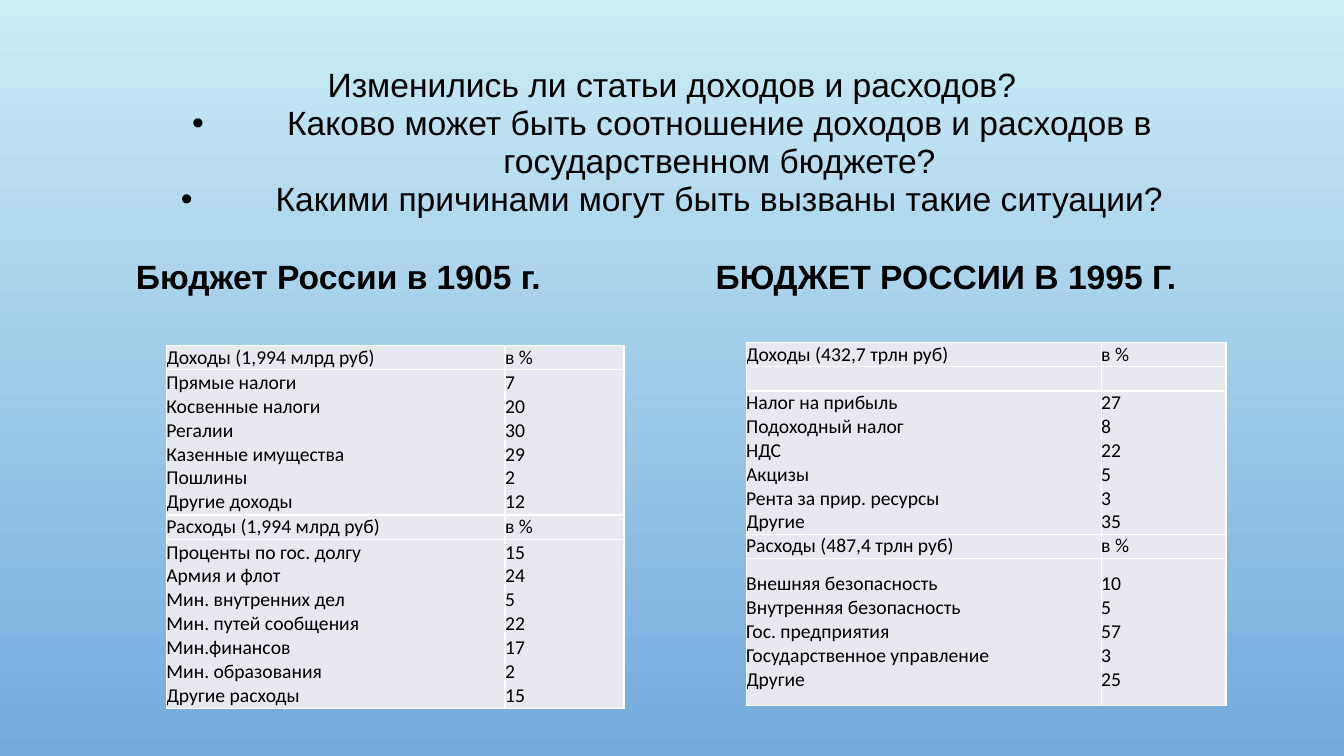
from collections import namedtuple
from dataclasses import dataclass

from pptx import Presentation
from pptx.dml.color import RGBColor
from pptx.enum.text import MSO_ANCHOR, PP_ALIGN
from pptx.oxml.ns import qn
from pptx.util import Inches, Pt
from lxml.etree import SubElement

Box = namedtuple("Box", "left top width height")
Section = namedtuple("Section", "height entries")


@dataclass(frozen=True)
class Theme:
    sky: str = "CBECF5"
    horizon: str = "73ABDD"
    ink: str = "000000"
    cell: str = "E8E9F0"
    border: str = "FFFFFF"
    display_font: str = "Arial"
    table_font: str = "Calibri"
    display_size: int = 24
    table_size: int = 14
    border_width: int = 1
    bullet_indent: float = 0.94


THEME = Theme()
LABEL_SHARE = 0.74

QUESTIONS = [
    ("Изменились ли статьи доходов и расходов?", False),
    ("Каково может быть соотношение доходов и расходов в государственном бюджете?", True),
    ("Какими причинами могут быть вызваны такие ситуации?", True),
]

BUDGET_1905 = [
    Section(0.24, [("Доходы (1,994 млрд руб)", "в %")]),
    Section(1.44, [
        ("Прямые налоги", "7"),
        ("Косвенные налоги", "20"),
        ("Регалии", "30"),
        ("Казенные имущества", "29"),
        ("Пошлины", "2"),
        ("Другие доходы", "12"),
    ]),
    Section(0.24, [("Расходы (1,994 млрд руб)", "в %")]),
    Section(1.68, [
        ("Проценты по гос. долгу", "15"),
        ("Армия и флот", "24"),
        ("Мин. внутренних дел", "5"),
        ("Мин. путей сообщения", "22"),
        ("Мин.финансов", "17"),
        ("Мин. образования", "2"),
        ("Другие расходы", "15"),
    ]),
]

BUDGET_1995 = [
    Section(0.24, [("Доходы (432,7 трлн руб)", "в %")]),
    Section(0.24, [("", "")]),
    Section(1.42, [
        ("Налог на прибыль", "27"),
        ("Подоходный налог", "8"),
        ("НДС", "22"),
        ("Акцизы", "5"),
        ("Рента за прир. ресурсы", "3"),
        ("Другие", "35"),
    ]),
    Section(0.24, [("Расходы (487,4 трлн руб)", "в %")]),
    Section(1.46, [
        ("Внешняя безопасность", "10"),
        ("Внутренняя безопасность", "5"),
        ("Гос. предприятия", "57"),
        ("Государственное управление", "3"),
        ("Другие", "25"),
    ]),
]


def color(code):
    return RGBColor.from_string(code)


def style(para, font, size, bold=False):
    para.font.name = font
    para.font.size = Pt(size)
    para.font.bold = bold
    para.font.color.rgb = color(THEME.ink)


def paint_background(page):
    fill = page.background.fill
    fill.gradient()
    fill.gradient_angle = 270
    for stop, code in zip(fill.gradient_stops, (THEME.sky, THEME.horizon)):
        stop.color.rgb = color(code)


def add_frame(page, box):
    frame = page.shapes.add_textbox(*map(Inches, box)).text_frame
    frame.word_wrap = True
    return frame


def add_bullet(para):
    indent = Inches(THEME.bullet_indent)
    properties = para._p.get_or_add_pPr()
    properties.set("marL", str(indent))
    properties.set("indent", str(-indent))
    SubElement(properties, qn("a:buFont"), typeface=THEME.display_font)
    SubElement(properties, qn("a:buChar"), char="•")


def add_questions(page, box):
    frame = add_frame(page, box)
    for index, (question, bulleted) in enumerate(QUESTIONS):
        para = frame.add_paragraph() if index else frame.paragraphs[0]
        para.text = question
        para.alignment = PP_ALIGN.CENTER
        para.line_spacing = 0.94
        if bulleted:
            add_bullet(para)
        style(para, THEME.display_font, THEME.display_size)


def add_heading(page, box, text):
    para = add_frame(page, box).paragraphs[0]
    para.text = text
    style(para, THEME.display_font, THEME.display_size, bold=True)


def outline_cell(cell):
    properties = cell._tc.get_or_add_tcPr()
    for index, side in enumerate(("a:lnL", "a:lnR", "a:lnT", "a:lnB")):
        line = properties.makeelement(qn(side), {"w": str(Pt(THEME.border_width))})
        SubElement(SubElement(line, qn("a:solidFill")), qn("a:srgbClr"), val=THEME.border)
        properties.insert(index, line)


def fill_cell(cell, lines):
    cell.margin_left = cell.margin_right = cell.margin_top = cell.margin_bottom = 0
    cell.vertical_anchor = MSO_ANCHOR.MIDDLE
    cell.fill.solid()
    cell.fill.fore_color.rgb = color(THEME.cell)
    outline_cell(cell)
    cell.text = "\n".join(lines)
    for para in cell.text_frame.paragraphs:
        style(para, THEME.table_font, THEME.table_size)


def add_budget(page, box, sections):
    table = page.shapes.add_table(len(sections), 2, *map(Inches, box)).table
    table.first_row = table.horz_banding = False
    for column, share in zip(table.columns, (LABEL_SHARE, 1 - LABEL_SHARE)):
        column.width = Inches(box.width * share)
    for row, section in zip(table.rows, sections):
        row.height = Inches(section.height)
        for cell, lines in zip(row.cells, zip(*section.entries)):
            fill_cell(cell, lines)


def build_comparison(deck):
    page = deck.slides.add_slide(deck.slide_layouts[6])
    paint_background(page)
    add_questions(page, Box(1, 0.62, 11.33, 1.6))
    add_heading(page, Box(1.25, 2.49, 5.33, 0.5), "Бюджет России в 1905 г.")
    add_heading(page, Box(7, 2.49, 5.33, 0.5), "БЮДЖЕТ РОССИИ В 1995 Г.")
    add_budget(page, Box(1.65, 3.43, 4.54, 3.6), BUDGET_1905)
    add_budget(page, Box(7.4, 3.4, 4.76, 3.6), BUDGET_1995)


def main():
    deck = Presentation()
    deck.slide_width, deck.slide_height = Inches(13.33), Inches(7.5)
    build_comparison(deck)
    deck.save("out.pptx")


if __name__ == "__main__":
    main()
